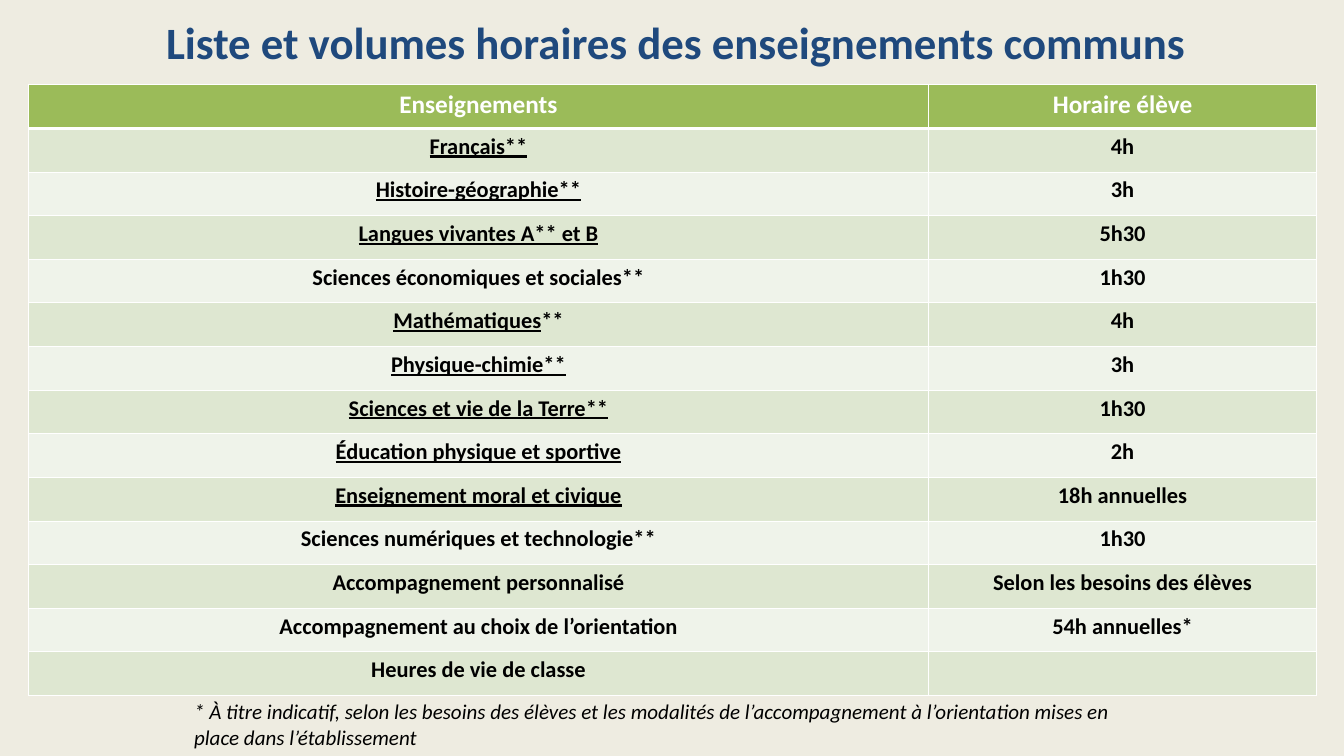
import pptx
import pptx.dml.color
import pptx.enum.text
import pptx.oxml
import pptx.oxml.ns
import pptx.util

Inches = pptx.util.Inches
Pt = pptx.util.Pt
RGBColor = pptx.dml.color.RGBColor
PP_ALIGN = pptx.enum.text.PP_ALIGN
MSO_ANCHOR = pptx.enum.text.MSO_ANCHOR

BEIGE = RGBColor(0xEE, 0xEC, 0xE1)
NAVY = RGBColor(0x1F, 0x49, 0x7D)
GREEN = RGBColor(0x9B, 0xBB, 0x59)
BAND_DARK = RGBColor(0xDE, 0xE7, 0xD1)
BAND_LIGHT = RGBColor(0xEF, 0xF3, 0xEA)
WHITE = RGBColor(0xFF, 0xFF, 0xFF)
BLACK = RGBColor(0, 0, 0)

HEADERS = ("Enseignements", "Horaire élève")
# underlined part, plain part, hours
SUBJECTS = [
    ("Français**", "", "4h"),
    ("Histoire-géographie**", "", "3h"),
    ("Langues vivantes A** et B", "", "5h30"),
    ("", "Sciences économiques et sociales**", "1h30"),
    ("Mathématiques", "**", "4h"),
    ("Physique-chimie**", "", "3h"),
    ("Sciences et vie de la Terre**", "", "1h30"),
    ("Éducation physique et sportive", "", "2h"),
    ("Enseignement moral et civique", "", "18h annuelles"),
    ("", "Sciences numériques et technologie**", "1h30"),
    ("", "Accompagnement personnalisé", "Selon les besoins des élèves"),
    ("", "Accompagnement au choix de l’orientation", "54h annuelles*"),
    ("", "Heures de vie de classe", ""),
]


def add_text(p, text, size=24, color=BLACK, bold=False, italic=False,
             underline=False, align=PP_ALIGN.CENTER):
    """Append one formatted run to the paragraph; empty text adds no run."""
    p.alignment = align
    if not text:
        return
    r = p.add_run()
    r.text = text
    r.font.name = "Calibri"
    r.font.size = Pt(size)
    r.font.color.rgb = color
    r.font.bold = bold
    r.font.italic = italic
    r.font.underline = underline


def set_borders(cell, bottom=1):
    """Draw white borders, 1 pt wide except for the bottom one."""
    tc_pr = cell._tc.get_or_add_tcPr()
    for i, (side, width) in enumerate(zip("LRTB", (1, 1, 1, bottom))):
        tc_pr.insert(i, pptx.oxml.parse_xml(
            f'<a:ln{side} {pptx.oxml.ns.nsdecls("a")} w="{Pt(width)}">'
            f'<a:solidFill><a:srgbClr val="{WHITE}"/></a:solidFill></a:ln{side}>'))


class SlideBuilder:
    """Holds the current slide and the margins of its text frames."""

    text_margins = (0.1, 0.05)
    cell_margins = (0.15, 0.07)

    def __init__(self, prs):
        self.slide = prs.slides.add_slide(prs.slide_layouts[5])
        fill = self.slide.background.fill
        fill.solid()
        fill.fore_color.rgb = BEIGE

    def set_margins(self, target, margins):
        target.margin_left = target.margin_right = Inches(margins[0])
        target.margin_top = target.margin_bottom = Inches(margins[1])

    def frame(self, sp, anchor):
        tf = sp.text_frame
        tf.word_wrap = True
        tf.auto_size = pptx.enum.text.MSO_AUTO_SIZE.NONE
        tf.vertical_anchor = anchor
        self.set_margins(tf, self.text_margins)
        return tf

    def title(self, text, left, top, width, height):
        sp = self.slide.shapes.title
        sp.left, sp.top = Inches(left), Inches(top)
        sp.width, sp.height = Inches(width), Inches(height)
        tf = self.frame(sp, MSO_ANCHOR.MIDDLE)
        add_text(tf.paragraphs[0], text, size=48, color=NAVY, bold=True)

    def note(self, text, left, top, width, height):
        sp = self.slide.shapes.add_textbox(
            Inches(left), Inches(top), Inches(width), Inches(height))
        tf = self.frame(sp, MSO_ANCHOR.TOP)
        add_text(tf.paragraphs[0], text, size=22.5, italic=True,
                 align=PP_ALIGN.LEFT)

    def cell(self, cell, color, bottom=1):
        """Style a table cell and return its paragraph."""
        cell.fill.solid()
        cell.fill.fore_color.rgb = color
        set_borders(cell, bottom)
        self.set_margins(cell, self.cell_margins)
        return cell.text_frame.paragraphs[0]

    def timetable(self, left, top, widths, height):
        rows = len(SUBJECTS) + 1
        table = self.slide.shapes.add_table(
            rows, len(widths), Inches(left), Inches(top),
            Inches(sum(widths)), Inches(height)).table
        for column, width in zip(table.columns, widths):
            column.width = Inches(width)
        for row in table.rows:
            row.height = Inches(height / rows)

        for col, header in enumerate(HEADERS):
            p = self.cell(table.cell(0, col), GREEN, bottom=3)
            add_text(p, header, size=27, color=WHITE, bold=True)
        for row, (underlined, plain, hours) in enumerate(SUBJECTS, 1):
            band = BAND_DARK if row % 2 else BAND_LIGHT
            p = self.cell(table.cell(row, 0), band)
            add_text(p, underlined, bold=True, underline=True)
            add_text(p, plain, bold=True)
            add_text(self.cell(table.cell(row, 1), band), hours, bold=True)


def main():
    prs = pptx.Presentation()
    prs.slide_width, prs.slide_height = Inches(20), Inches(11.25)
    s = SlideBuilder(prs)
    s.title("Liste et volumes horaires des enseignements communs",
            0.12, 0.16, 19.88, 0.91)
    s.timetable(0.42, 1.26, (13.4, 5.77), 9.09)
    s.note("* À titre indicatif, selon les besoins des élèves et les modalités "
           "de l’accompagnement à l’orientation mises en place dans "
           "l’établissement", 2.79, 10.35, 14.27, 0.86)
    prs.save("out.pptx")


if __name__ == "__main__":
    main()
